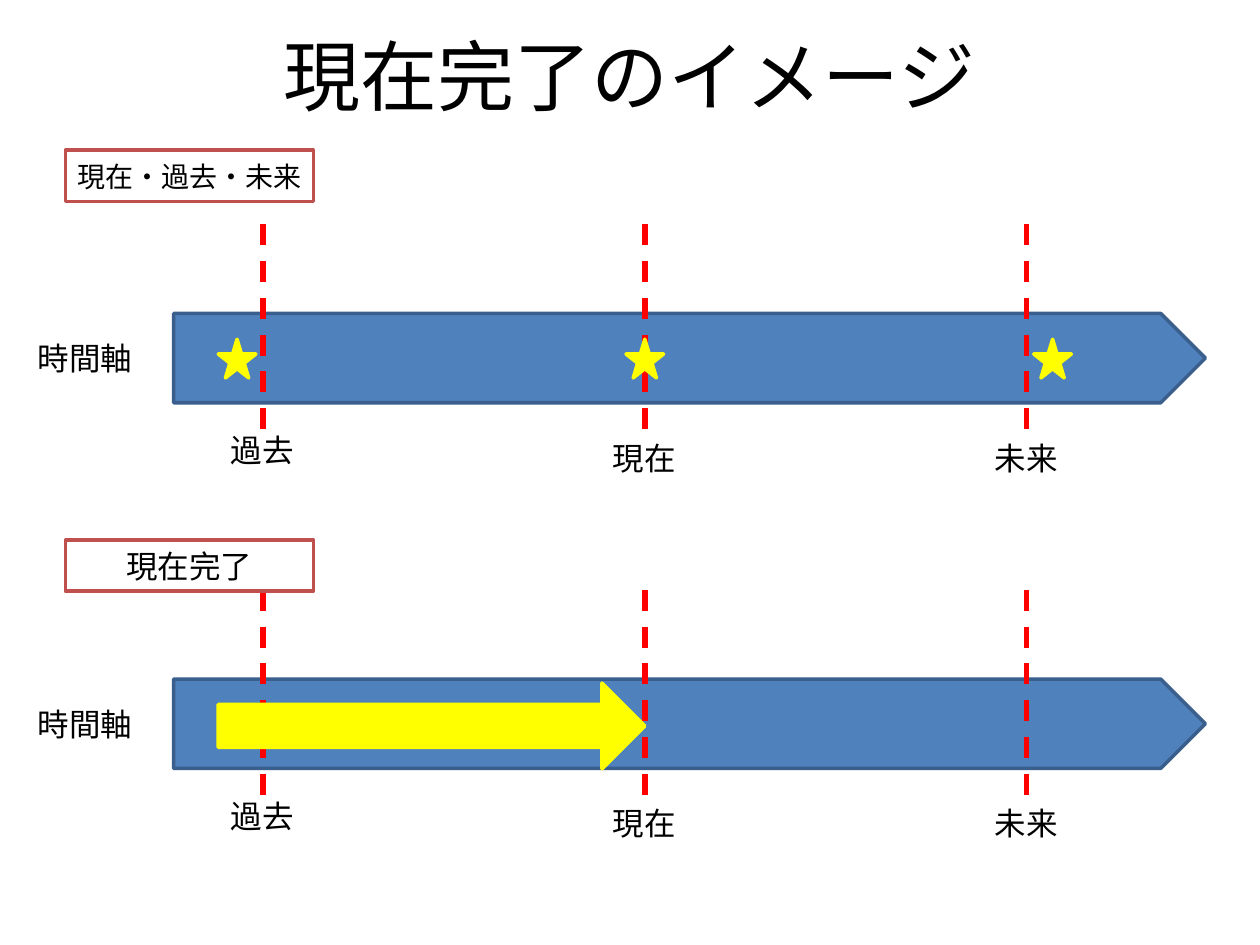
from lxml import etree
from pptx import Presentation
from pptx.dml.color import RGBColor
from pptx.enum.dml import MSO_LINE
from pptx.enum.shapes import MSO_CONNECTOR, MSO_SHAPE
from pptx.enum.text import MSO_ANCHOR, PP_ALIGN
from pptx.oxml.ns import qn
from pptx.util import Cm, Pt

RECTANGLE, PENTAGON = MSO_SHAPE.RECTANGLE, MSO_SHAPE.PENTAGON
STAR, RIGHT_ARROW = MSO_SHAPE.STAR_5_POINT, MSO_SHAPE.RIGHT_ARROW
STRAIGHT, DASH = MSO_CONNECTOR.STRAIGHT, MSO_LINE.DASH
LEFT, CENTER, MIDDLE = PP_ALIGN.LEFT, PP_ALIGN.CENTER, MSO_ANCHOR.MIDDLE

FONT = "Calibri"
COLORS = {
    "text": "000000", "bar": "4F81BD", "bar_line": "3A5F8C", "marker": "FF0000",
    "event": "FFFF00", "box": "FFFFFF", "box_line": "C0504D",
}

TITLE = "現在完了のイメージ"
AXIS_NAME = "時間軸"
TIMES = [("現在", 13, 8.72), ("過去", 5.3, 8.57), ("未来", 20.7, 8.72)]
STAR_CENTERS = [4.78, 13, 21.22]
TIMELINES = [
    {"name": "現在・過去・未来", "name_top": 3.03, "offset": 0,
     "style": {"size": 16, "align": LEFT, "wrap": False}},
    {"name": "現在完了", "name_top": 10.89, "offset": 7.37,
     "style": {"size": 18, "align": CENTER, "wrap": True}},
]

MARKER_TOP, MARKER_BOTTOM = 4.52, 8.74
BAR_LEFT, BAR_TOP, BAR_WIDTH, BAR_HEIGHT = 3.5, 6.32, 20.8, 1.8
LABEL_WIDTH, LABEL_HEIGHT = 1.8, 1.03
STAR_WIDTH, STAR_HEIGHT, STAR_TOP = 0.76, 0.78, 6.84


def color(name):
    return RGBColor.from_string(COLORS[name])


def write(shape, text, size=18, align=LEFT, wrap=False):
    text_frame = shape.text_frame
    text_frame.text = text
    text_frame.word_wrap = wrap
    paragraph = text_frame.paragraphs[0]
    paragraph.alignment = align
    font = paragraph.runs[0].font
    font.name, font.size = FONT, Pt(size)
    font.color.rgb = color("text")


def add_label(slide, text, left, top, width, height=LABEL_HEIGHT, **style):
    label = slide.shapes.add_textbox(Cm(left), Cm(top), Cm(width), Cm(height))
    write(label, text, **style)
    return label


def add_shape(slide, kind, left, top, width, height, fill, line):
    shape = slide.shapes.add_shape(kind, Cm(left), Cm(top), Cm(width), Cm(height))
    shape.shadow.inherit = False
    shape.fill.solid()
    shape.fill.fore_color.rgb = color(fill)
    shape.line.color.rgb = color(line)
    shape.line.width = Pt(2)
    return shape


def add_marker(slide, x, top, bottom):
    marker = slide.shapes.add_connector(STRAIGHT, Cm(x), Cm(top), Cm(x), Cm(bottom))
    marker.line.color.rgb = color("marker")
    marker.line.width = Pt(3)
    marker.line.dash_style = DASH
    etree.SubElement(marker._element.spPr, qn("a:effectLst"))


def add_timeline(slide, timeline):
    offset = timeline["offset"]
    add_shape(slide, PENTAGON, BAR_LEFT, BAR_TOP + offset, BAR_WIDTH, BAR_HEIGHT,
              "bar", "bar_line")
    add_label(slide, AXIS_NAME, 0.51, 6.71 + offset, 2.44)
    for name, x, label_top in TIMES:
        add_marker(slide, x, MARKER_TOP + offset, MARKER_BOTTOM + offset)
        add_label(slide, name, x - LABEL_WIDTH / 2, label_top + offset, LABEL_WIDTH)
    box = add_shape(slide, RECTANGLE, 1.32, timeline["name_top"], 5, LABEL_HEIGHT,
                    "box", "box_line")
    write(box, timeline["name"], **timeline["style"])


def main():
    presentation = Presentation()
    presentation.slide_width, presentation.slide_height = Cm(25.4), Cm(19.05)
    slide = presentation.slides.add_slide(presentation.slide_layouts[6])

    title = add_label(slide, TITLE, 1.27, -0.08, 22.86, 3.18, size=44, align=CENTER, wrap=True)
    title.text_frame.vertical_anchor = MIDDLE
    for timeline in TIMELINES:
        add_timeline(slide, timeline)
    for center in STAR_CENTERS:
        add_shape(slide, STAR, center - STAR_WIDTH / 2, STAR_TOP, STAR_WIDTH, STAR_HEIGHT,
                  "event", "event")
    add_shape(slide, RIGHT_ARROW, 4.4, 13.77, 8.6, 1.73, "event", "event")

    presentation.save("out.pptx")


if __name__ == "__main__":
    main()
